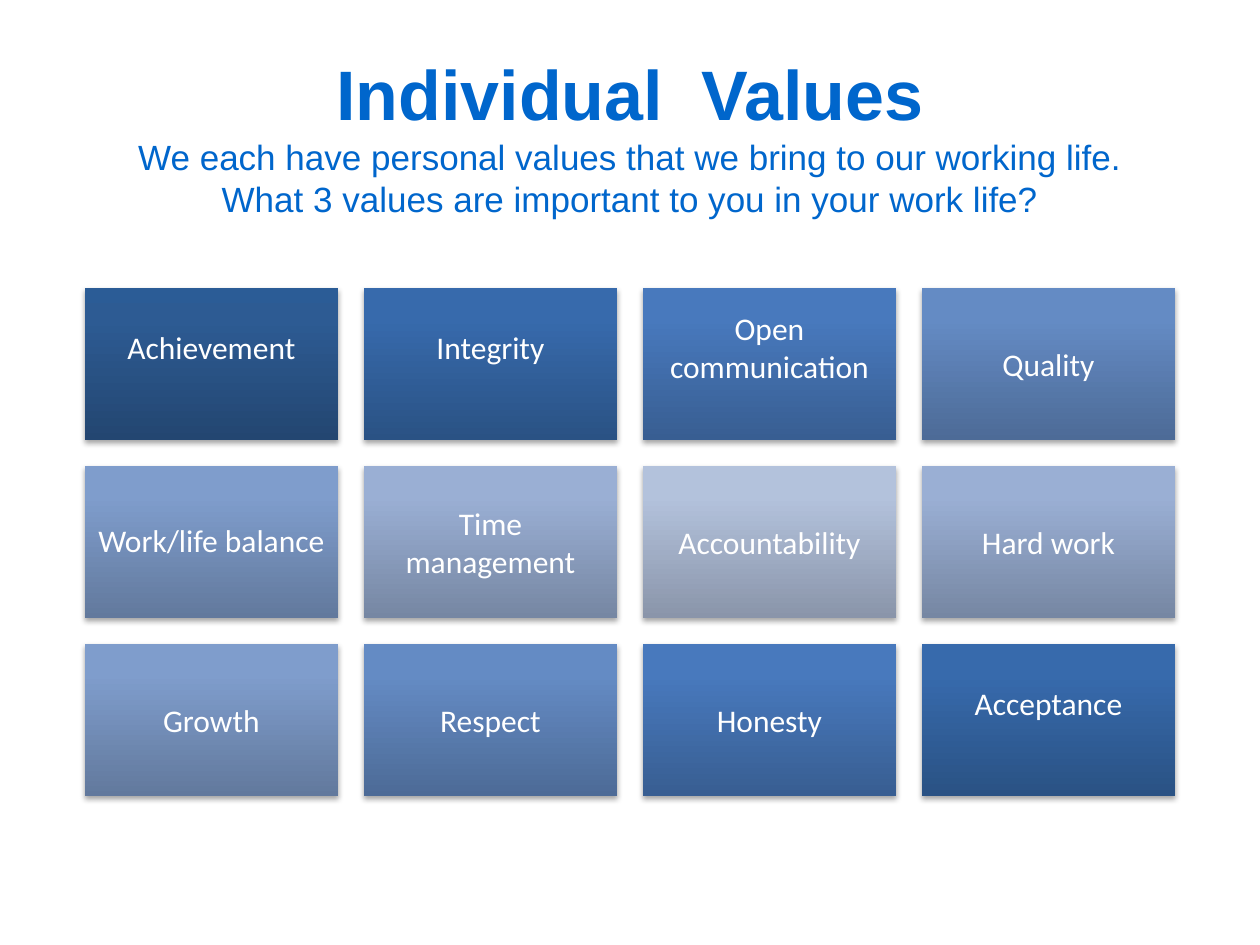
from copy import deepcopy

from lxml.etree import SubElement
from pptx import Presentation
from pptx.dml.color import RGBColor
from pptx.enum.shapes import MSO_SHAPE as SHAPE
from pptx.enum.text import MSO_ANCHOR as ANCHOR, MSO_AUTO_SIZE as AUTO, PP_ALIGN as ALIGN
from pptx.oxml.ns import qn
from pptx.util import Pt

PX = 914400 / 126

COLORS = {"title": "0066CC", "text": "FFFFFF", "shadow": "000000"}

HEADING = "Individual  Values"
INTRO = [
    "We each have personal values that we bring to our working life.",
    "What 3 values are important to you in your work life?",
]

# Label and extra bottom inset in px, which lifts the centred text
VALUES = [
    ("Achievement", 34), ("Integrity", 34), ("Open communication", 34), ("Quality", 0),
    ("Work/life balance", 4), ("Time management", 0), ("Accountability", 0), ("Hard work", 0),
    ("Growth", 0), ("Respect", 0), ("Honesty", 0), ("Acceptance", 34),
]

# Gradients from dark to light; each lists its stops from bottom to top
STOPS = (0, 0.8, 1)
RAMP = [
    ("234671", "2D5B93", "2B5C96"),
    ("2A5284", "376AAC", "356AAF"),
    ("385E92", "4879BD", "467AC0"),
    ("4D6B97", "648BC4", "638BC7"),
    ("62799D", "7F9DCC", "7E9DCE"),
    ("7687A3", "9AAFD4", "99B0D6"),
    ("8A95AA", "B3C2DC", "B4C3DE"),
]

COLS = 4
LEFT, TOP = 85, 288
TILE_W, TILE_H = 253, 152
GAP = 26
INSET = 9


def px(n):
    return round(n * PX)


def rgb(name):
    return RGBColor.from_string(COLORS[name])


def fill_gradient(shape, colors):
    fill = shape.fill
    fill.gradient()
    fill.gradient_angle = 90
    stop_list = shape._element.spPr.find(".//" + qn("a:gsLst"))
    stop_list.append(deepcopy(stop_list[0]))
    for stop, position, color in zip(fill.gradient_stops, STOPS, colors):
        stop.position = position
        stop.color.rgb = RGBColor.from_string(color)


def add_shadow(shape):
    shape.shadow.inherit = False
    effects = shape._element.spPr.find(qn("a:effectLst"))
    outer = SubElement(effects, qn("a:outerShdw"), blurRad=str(Pt(3.1)), dist=str(Pt(1.8)),
                       dir="5400000", rotWithShape="0")
    color = SubElement(outer, qn("a:srgbClr"), val=COLORS["shadow"])
    SubElement(color, qn("a:alpha"), val="35000")


def add_title(s):
    title = s.shapes.title
    title.left, title.top, title.width, title.height = map(px, (63, 16, 1134, 238))
    tf = title.text_frame
    tf.auto_size = AUTO.NONE
    tf.vertical_anchor = ANCHOR.MIDDLE
    p = tf.paragraphs[0]
    p.alignment = ALIGN.CENTER
    p.font.name = "Arial"
    p.font.color.rgb = rgb("title")
    p.font.size = Pt(20)
    r = p.add_run()
    r.text = HEADING
    r.font.size = Pt(40)
    r.font.bold = True
    for line in INTRO:
        p.add_line_break()
        p.add_run().text = line


def add_tile(s, i, label, lift):
    row, col = divmod(i, COLS)
    x = LEFT + col * (TILE_W + GAP)
    y = TOP + row * (TILE_H + GAP)
    sp = s.shapes.add_shape(SHAPE.RECTANGLE, px(x), px(y), px(TILE_W), px(TILE_H))
    fill_gradient(sp, RAMP[min(i, len(VALUES) - i)])
    sp.line.fill.background()
    add_shadow(sp)
    tf = sp.text_frame
    tf.word_wrap = True
    tf.vertical_anchor = ANCHOR.MIDDLE
    tf.margin_left = tf.margin_right = tf.margin_top = px(INSET)
    tf.margin_bottom = px(INSET + lift)
    p = tf.paragraphs[0]
    p.text = label
    p.alignment = ALIGN.CENTER
    p.font.name = "Calibri"
    p.font.size = Pt(18)
    p.font.color.rgb = rgb("text")


def main():
    prs = Presentation()
    prs.slide_width, prs.slide_height = px(1260), px(945)
    s = prs.slides.add_slide(prs.slide_layouts[5])
    add_title(s)
    for i, (label, lift) in enumerate(VALUES):
        add_tile(s, i, label, lift)
    prs.save("out.pptx")


if __name__ == "__main__":
    main()
